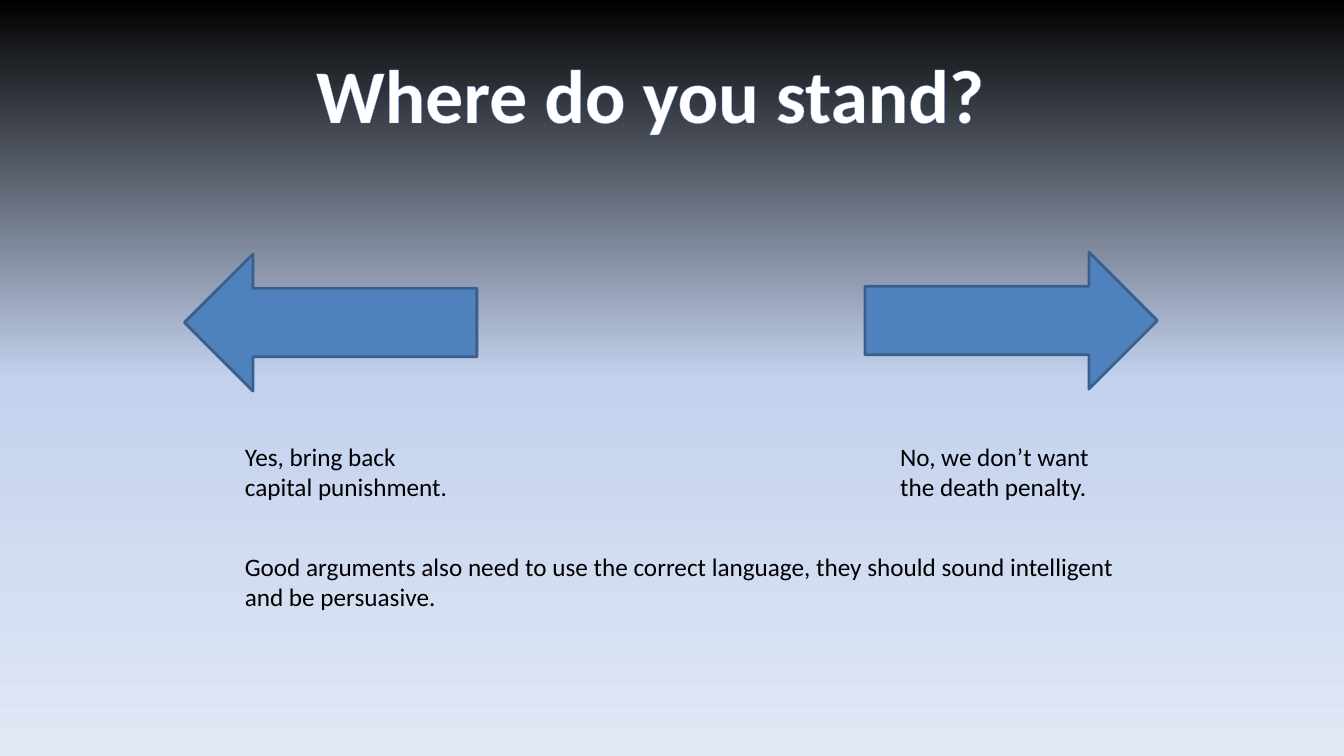
from copy import deepcopy
from lxml.etree import SubElement
from pptx import Presentation
from pptx.dml.color import RGBColor
from pptx.enum.shapes import MSO_SHAPE
from pptx.enum.text import MSO_ANCHOR, MSO_AUTO_SIZE, PP_ALIGN
from pptx.oxml.ns import qn
from pptx.util import Inches, Pt

BLACK = RGBColor(0x00, 0x00, 0x00)
WHITE = RGBColor(0xFF, 0xFF, 0xFF)
SKY = RGBColor(0xC2, 0xD1, 0xED)
PALE = RGBColor(0xE1, 0xE8, 0xF5)
BLUE = RGBColor(0x4F, 0x81, 0xBD)
NAVY = RGBColor(0x3A, 0x5F, 0x8C)
GLOW = RGBColor(0x7E, 0xA6, 0xEA)


def write(box, text, size, color):
    frame = box.text_frame
    frame.auto_size = MSO_AUTO_SIZE.SHAPE_TO_FIT_TEXT
    frame.vertical_anchor = MSO_ANCHOR.TOP
    run = frame.paragraphs[0].add_run()
    run.text = text
    run.font.name = "Calibri"
    run.font.size = Pt(size)
    run.font.color.rgb = color
    return run


deck = Presentation()
deck.slide_width = Inches(13.33)
deck.slide_height = Inches(7.5)
slide = deck.slides.add_slide(deck.slide_layouts[5])

fill = slide.background.fill
fill.gradient()
fill.gradient_angle = 270
stops = slide.element.find(".//" + qn("a:gsLst"))
stops.insert(1, deepcopy(stops[0]))
for stop, place, color in zip(fill.gradient_stops, (0, 0.5, 1), (BLACK, SKY, PALE)):
    stop.position = place
    stop.color.rgb = color

title = slide.shapes.title
title.left, title.top = Inches(3), Inches(0.42)
title.width, title.height = Inches(6.9), Inches(1.01)
run = write(title, "Where do you stand?", 54, WHITE)
run.font.bold = True
title.text_frame.word_wrap = False
title.text_frame.paragraphs[0].alignment = PP_ALIGN.CENTER
props = run.font.fill and run._r.get_or_add_rPr()
edge = SubElement(props, qn("a:ln"), w=str(Pt(2.48)))
paint = SubElement(edge, qn("a:solidFill"))
SubElement(paint, qn("a:srgbClr"), val=str(GLOW))
props.insert(0, edge)

for left, top, turn in ((1.83, 2.52, 0), (8.58, 2.5, 180)):
    arrow = slide.shapes.add_shape(
        MSO_SHAPE.LEFT_ARROW, Inches(left), Inches(top), Inches(2.9), Inches(1.36))
    arrow.rotation = turn
    arrow.shadow.inherit = False
    arrow.fill.solid()
    arrow.fill.fore_color.rgb = BLUE
    arrow.line.color.rgb = NAVY
    arrow.line.width = Pt(2)

notes = (
    (2.33, 4.33, 2.25, "Yes, bring back capital punishment."),
    (8.83, 4.33, 2.17, "No, we don’t want the death penalty."),
    (2.33, 5.42, 8.83, "Good arguments also need to use the correct language, "
     "they should sound intelligent and be persuasive."),
)
for left, top, width, text in notes:
    box = slide.shapes.add_textbox(Inches(left), Inches(top), Inches(width), Inches(0.71))
    box.text_frame.word_wrap = True
    write(box, text, 18, BLACK)

deck.save("out.pptx")
